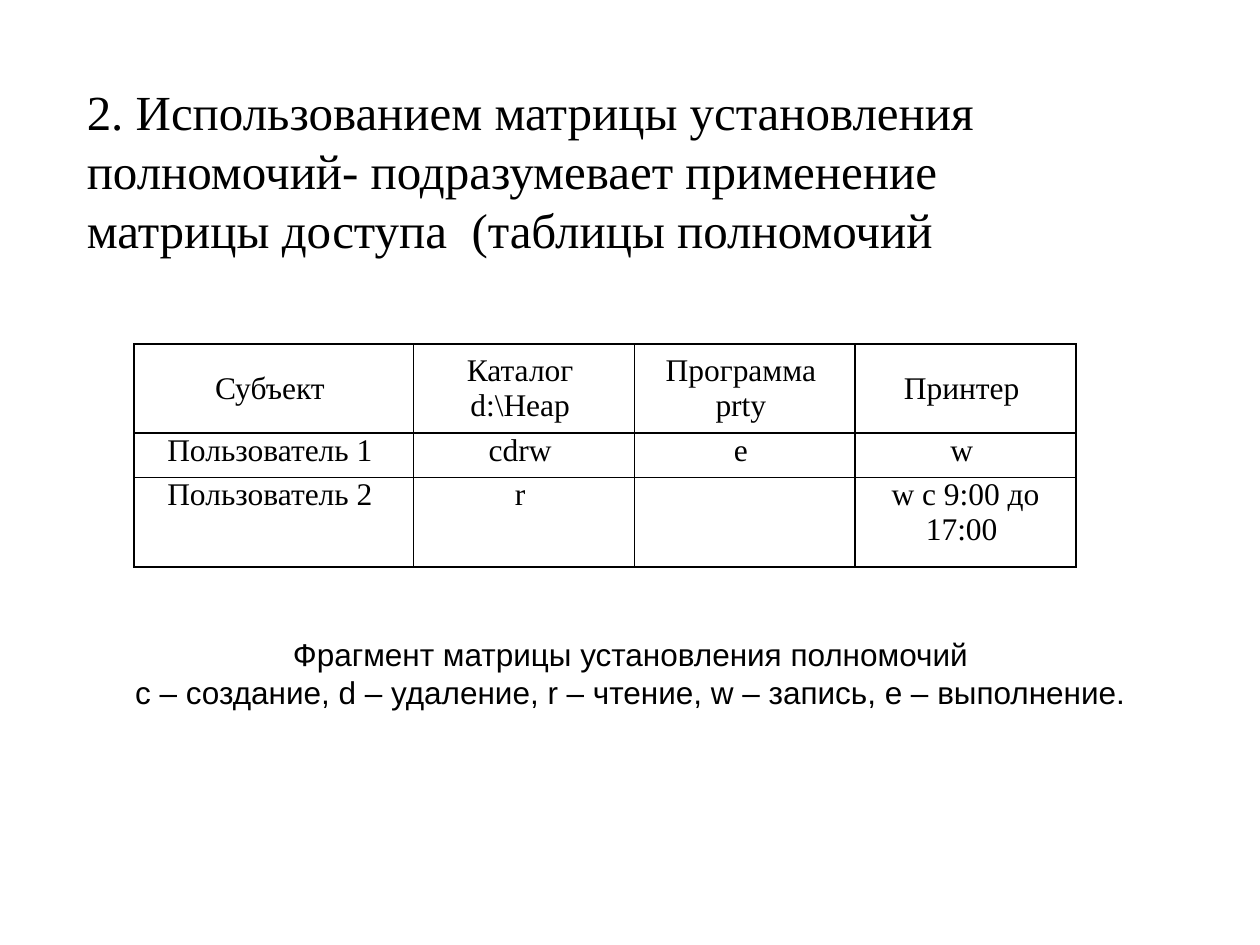
from lxml.etree import SubElement
from pptx import Presentation
from pptx.dml.color import RGBColor
from pptx.enum.text import MSO_ANCHOR as Anchor, MSO_AUTO_SIZE as AutoSize, PP_ALIGN as Align
from pptx.oxml.ns import qn
from pptx.util import Cm, Pt

COLORS = {"text": "000000", "border": "000000", "page": "FFFFFF"}
SERIF, SANS = "Times New Roman", "Arial"

TITLE = ("2. Использованием матрицы установления полномочий- подразумевает "
         "применение  матрицы доступа  (таблицы полномочий")
CAPTION = ("Фрагмент матрицы установления полномочий \n"
           "c – создание, d – удаление, r – чтение, w – запись, e – выполнение. ")
RIGHTS = [
    ["Субъект ", "Каталог \nd:\\Heap ", "Программа \nprty ", "Принтер "],
    ["Пользователь 1 ", "сdrw ", "е ", "w "],
    ["Пользователь 2 ", "r ", "", "w c 9:00 до 17:00 "],
]
COLUMN_WIDTHS = [5.64, 4.45, 4.45, 4.45]
ROW_HEIGHTS = [1.8, 0.9, 1.8]


def write_text(frame, text, *, font, size, align=Align.LEFT):
    """Fill a text frame, one paragraph per line of text."""
    for index, line in enumerate(text.split("\n")):
        para = frame.paragraphs[0] if index == 0 else frame.add_paragraph()
        para.alignment = align
        para.font.name, para.font.size = font, Pt(size)
        if line:
            span = para.add_run()
            span.text = line
            span.font.name, span.font.size = font, Pt(size)
            span.font.color.rgb = RGBColor.from_string(COLORS["text"])


def add_text(page, text, left, top, width, height, *, anchor=Anchor.TOP, **style):
    box = page.shapes.add_textbox(Cm(left), Cm(top), Cm(width), Cm(height))
    frame = box.text_frame
    frame.word_wrap = True
    frame.auto_size = AutoSize.SHAPE_TO_FIT_TEXT
    frame.vertical_anchor = anchor
    write_text(frame, text, **style)


def set_borders(cell):
    """Draw a thin line on each side; the fill must be set afterwards."""
    properties = cell._tc.get_or_add_tcPr()
    for side in ("a:lnL", "a:lnR", "a:lnT", "a:lnB"):
        line = SubElement(properties, qn(side), w=str(Pt(1)))
        fill = SubElement(line, qn("a:solidFill"))
        SubElement(fill, qn("a:srgbClr"), val=COLORS["border"])


def add_rights_table(page, left, top):
    table = page.shapes.add_table(
        len(RIGHTS), len(COLUMN_WIDTHS), Cm(left), Cm(top),
        Cm(sum(COLUMN_WIDTHS)), Cm(sum(ROW_HEIGHTS))).table
    table.first_row = table.horz_banding = False
    for column, width in zip(table.columns, COLUMN_WIDTHS):
        column.width = Cm(width)
    for index, (row, height) in enumerate(zip(table.rows, ROW_HEIGHTS)):
        row.height = Cm(height)
        for cell, text in zip(row.cells, RIGHTS[index]):
            cell.margin_left = cell.margin_right = Cm(0.05)
            cell.margin_top = cell.margin_bottom = Cm(0)
            cell.vertical_anchor = Anchor.MIDDLE if index == 0 else Anchor.TOP
            set_borders(cell)
            cell.fill.background()
            write_text(cell.text_frame, text, font=SERIF, size=18, align=Align.CENTER)


def main():
    deck = Presentation()
    deck.slide_width, deck.slide_height = Cm(25.4), Cm(19.05)
    page = deck.slides.add_slide(deck.slide_layouts[6])
    page.background.fill.solid()
    page.background.fill.fore_color.rgb = RGBColor.from_string(COLORS["page"])

    # Access matrix
    add_rights_table(page, 2.7, 6.93)

    # Caption with the key to the letters
    add_text(page, CAPTION, 1.3, 12.67, 23, 1.8, anchor=Anchor.MIDDLE,
             font=SANS, size=18, align=Align.CENTER)

    # Heading
    add_text(page, TITLE, 1.5, 1.52, 21.8, 3.84, font=SERIF, size=28)

    deck.save("out.pptx")


if __name__ == "__main__":
    main()
